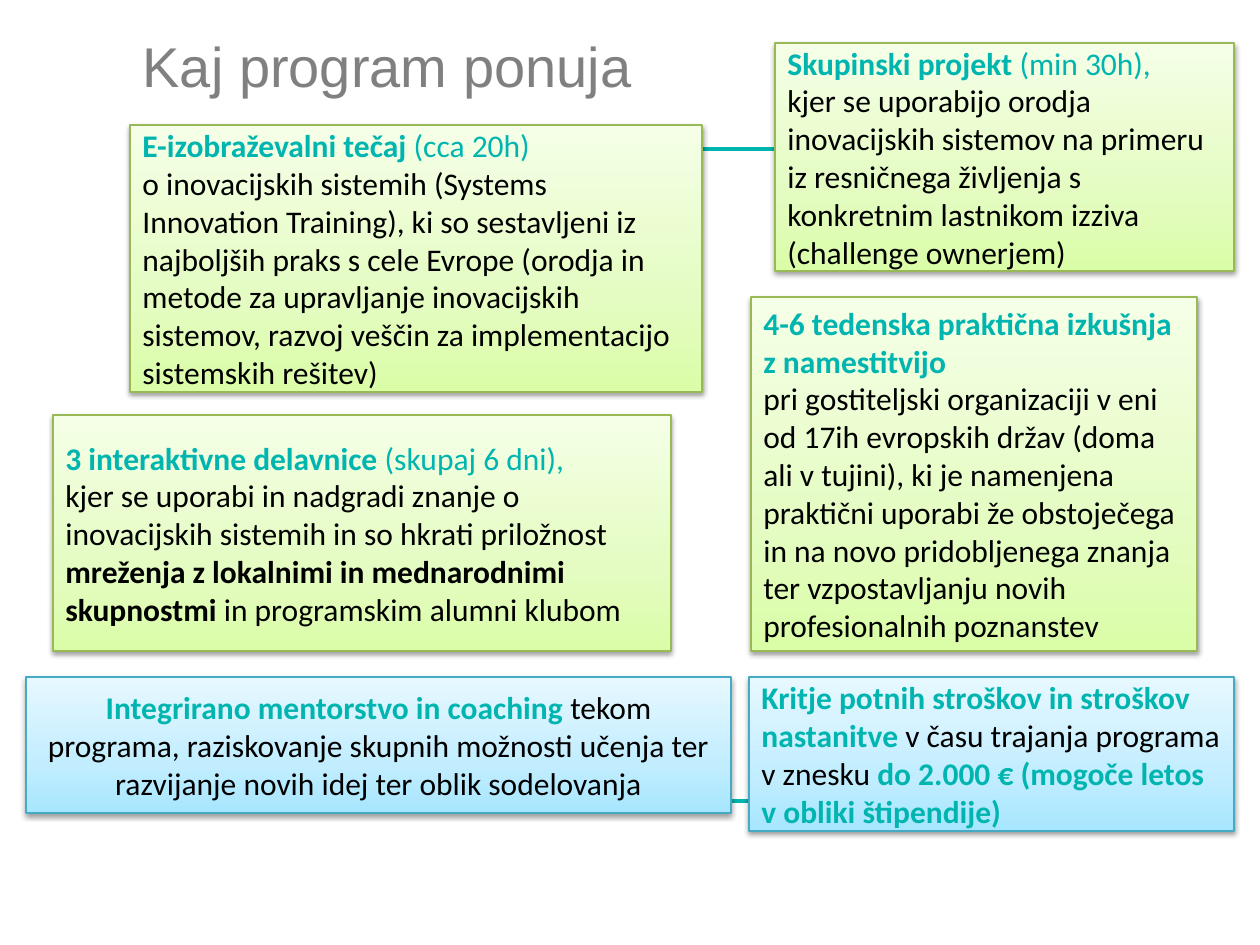
import dataclasses
import typing

import lxml.etree
import pptx
import pptx.dml.color
import pptx.enum.shapes
import pptx.enum.text
import pptx.oxml.ns
import pptx.util

EMU_PER_PX = 914400 / 126
ALIGN = pptx.enum.text.PP_ALIGN


class Palette(typing.NamedTuple):
    bottom: str
    middle: str
    top: str
    border: str


@dataclasses.dataclass(frozen=True)
class Theme:
    accent: str = "00B5AF"
    ink: str = "000000"
    heading: str = "808080"
    green: Palette = Palette("DAFDA7", "E4FCC2", "F5FFE7", "98B955")
    blue: Palette = Palette("A7E6FF", "C1EDFF", "E7F8FF", "46AAC5")
    heading_font: str = "Arial"
    card_font: str = "Calibri"
    heading_size: int = 32
    card_size: int = 18
    rule_width: int = 2
    border_width: float = 0.75


THEME = Theme()


class Span(typing.NamedTuple):
    text: str
    color: str = THEME.ink
    bold: bool = False


class Box(typing.NamedTuple):
    left: int
    top: int
    width: int
    height: int


@dataclasses.dataclass(frozen=True)
class Card:
    box: Box
    palette: Palette
    paragraphs: list[list[Span]]
    align: ALIGN = ALIGN.LEFT


def px(length: int) -> pptx.util.Emu:
    return pptx.util.Emu(round(length * EMU_PER_PX))


def rgb(color: str) -> pptx.dml.color.RGBColor:
    return pptx.dml.color.RGBColor.from_string(color)


def add_element(parent, tag: str, **attributes: str):
    return lxml.etree.SubElement(parent, pptx.oxml.ns.qn(tag), **attributes)


def write(paragraph, text: str, *, font: str, size: int, color: str, bold: bool = False) -> None:
    run = paragraph.add_run()
    run.text = text
    run.font.name = font
    run.font.size = pptx.util.Pt(size)
    run.font.bold = bold
    run.font.color.rgb = rgb(color)


def draw_rule(slide, y: int) -> None:
    rule = slide.shapes.add_connector(
        pptx.enum.shapes.MSO_CONNECTOR.STRAIGHT, px(130), px(y), px(1137), px(y))
    rule.line.color.rgb = rgb(THEME.accent)
    rule.line.width = pptx.util.Pt(THEME.rule_width)
    add_element(rule._element.spPr, "a:effectLst")


def fill_gradient(shape, palette: Palette) -> None:
    shape.fill.gradient()
    shape.fill.gradient_angle = 90
    stops = shape._element.spPr.find(".//" + pptx.oxml.ns.qn("a:gsLst"))
    for stop in list(stops):
        stops.remove(stop)
    for percent, color in ((0, palette.bottom), (35, palette.middle), (100, palette.top)):
        stop = add_element(stops, "a:gs", pos=str(percent * 1000))
        add_element(stop, "a:srgbClr", val=color)


def cast_shadow(shape) -> None:
    shape.shadow.inherit = False
    effects = shape._element.spPr.find(pptx.oxml.ns.qn("a:effectLst"))
    shadow = add_element(
        effects, "a:outerShdw", blurRad=str(pptx.util.Pt(3.1)), dist=str(pptx.util.Pt(1.6)),
        dir="5400000", rotWithShape="0")
    shade = add_element(shadow, "a:srgbClr", val=THEME.ink)
    add_element(shade, "a:alpha", val="38000")


def draw_card(slide, card: Card) -> None:
    shape = slide.shapes.add_shape(
        pptx.enum.shapes.MSO_SHAPE.RECTANGLE, *map(px, card.box))
    fill_gradient(shape, card.palette)
    shape.line.color.rgb = rgb(card.palette.border)
    shape.line.width = pptx.util.Pt(THEME.border_width)
    cast_shadow(shape)
    frame = shape.text_frame
    frame.word_wrap = True
    frame.vertical_anchor = pptx.enum.text.MSO_ANCHOR.MIDDLE
    for index, spans in enumerate(card.paragraphs):
        paragraph = frame.add_paragraph() if index else frame.paragraphs[0]
        paragraph.alignment = card.align
        for span in spans:
            write(paragraph, span.text, font=THEME.card_font, size=THEME.card_size,
                  color=span.color, bold=span.bold)


def draw_heading(slide, text: str, box: Box) -> None:
    heading = slide.shapes.title
    heading.left, heading.top, heading.width, heading.height = map(px, box)
    frame = heading.text_frame
    frame.word_wrap = True
    frame.auto_size = pptx.enum.text.MSO_AUTO_SIZE.NONE
    frame.vertical_anchor = pptx.enum.text.MSO_ANCHOR.TOP
    frame.paragraphs[0].alignment = ALIGN.LEFT
    write(frame.paragraphs[0], text, font=THEME.heading_font,
          size=THEME.heading_size, color=THEME.heading)


def key(text: str) -> Span:
    return Span(text, THEME.accent, True)


def aside(text: str) -> Span:
    return Span(text, THEME.accent)


CARDS = [
    Card(Box(130, 125, 572, 267), THEME.green, [
        [key("E-izobraževalni tečaj "), aside("(cca 20h)")],
        [Span("o inovacijskih sistemih (Systems Innovation Training), ki so sestavljeni iz "
              "najboljših praks s cele Evrope (orodja in metode za upravljanje inovacijskih "
              "sistemov, razvoj veščin za implementacijo sistemskih rešitev)")],
    ]),
    Card(Box(53, 415, 618, 236), THEME.green, [
        [key("3 interaktivne delavnice "), aside("(skupaj 6 dni),")],
        [Span("kjer se uporabi in nadgradi znanje o inovacijskih sistemih in so hkrati priložnost "),
         Span("mreženja z lokalnimi in mednarodnimi skupnostmi", bold=True),
         Span(" in programskim alumni klubom")],
    ]),
    Card(Box(775, 43, 459, 228), THEME.green, [
        [key("Skupinski projekt "), aside("(min 30h),")],
        [Span("kjer se uporabijo orodja inovacijskih sistemov na primeru iz resničnega življenja "
              "s konkretnim lastnikom izziva (challenge ownerjem)")],
    ]),
    Card(Box(751, 297, 446, 354), THEME.green, [
        [key("4-6 tedenska praktična izkušnja z namestitvijo")],
        [Span("pri gostiteljski organizaciji v eni od 17ih evropskih držav (doma ali v tujini), "
              "ki je namenjena praktični uporabi že obstoječega in na novo pridobljenega znanja "
              "ter vzpostavljanju novih profesionalnih poznanstev")],
    ]),
    Card(Box(749, 677, 485, 154), THEME.blue, [
        [key("Kritje potnih stroškov in stroškov nastanitve "),
         Span("v času trajanja programa v znesku "),
         key("do 2.000 € (mogoče letos v obliki štipendije)")],
    ]),
    Card(Box(26, 677, 705, 136), THEME.blue, [
        [key("Integrirano mentorstvo in coaching "),
         Span("tekom programa, raziskovanje skupnih možnosti učenja ter razvijanje novih idej "
              "ter oblik sodelovanja")],
    ], ALIGN.CENTER),
]


def main() -> None:
    deck = pptx.Presentation()
    deck.slide_width, deck.slide_height = px(1260), px(945)
    slide = deck.slides.add_slide(deck.slide_layouts.get_by_name("Title Only"))
    draw_heading(slide, "Kaj program ponuja", Box(130, 25, 1007, 67))
    for y in (149, 801):
        draw_rule(slide, y)
    for card in CARDS:
        draw_card(slide, card)
    deck.save("out.pptx")


if __name__ == "__main__":
    main()
